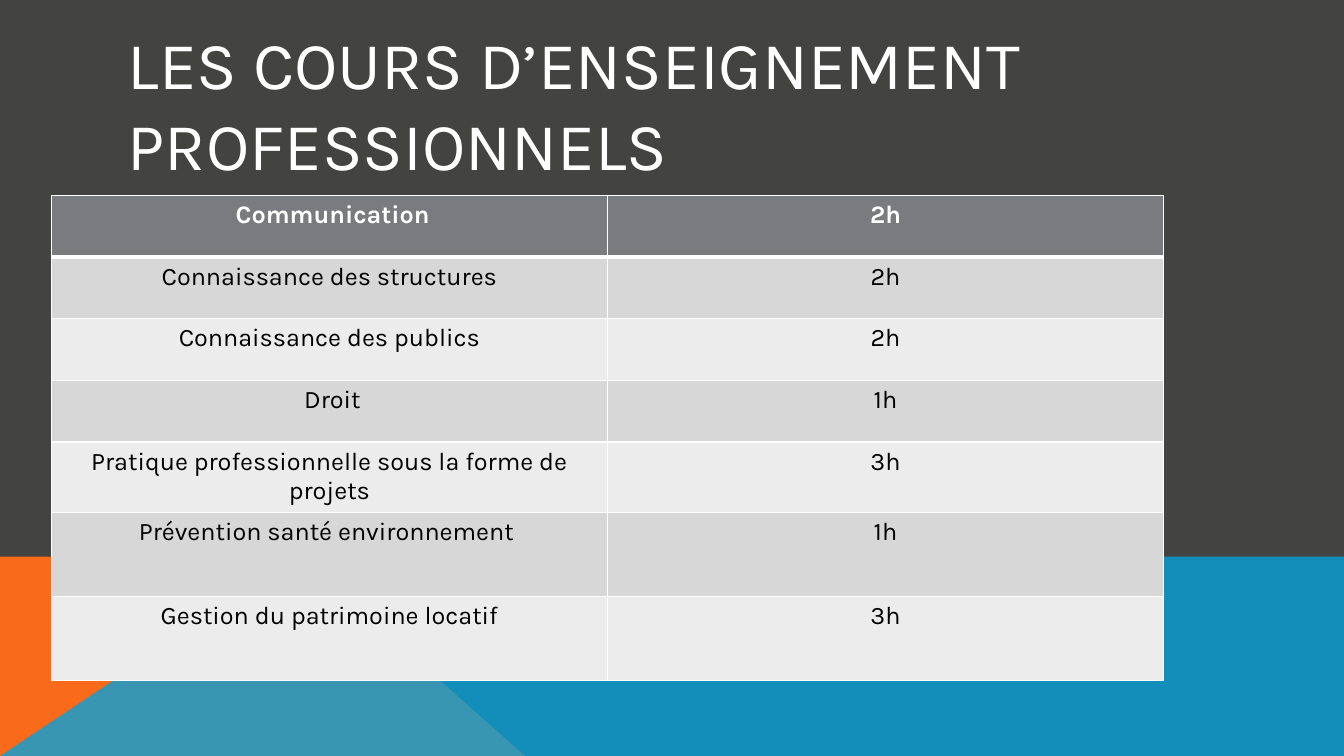
from lxml import etree
from pptx import Presentation
from pptx.dml.color import RGBColor
from pptx.enum.text import MSO_ANCHOR, PP_ALIGN
from pptx.oxml.ns import qn
from pptx.util import Pt

MIDDLE = MSO_ANCHOR.MIDDLE
CENTER = PP_ALIGN.CENTER
FONT = "Karla"
WHITE = RGBColor(0xFF, 0xFF, 0xFF)
BLACK = RGBColor(0x00, 0x00, 0x00)
BACKGROUND = RGBColor(0x43, 0x43, 0x42)
ORANGE = RGBColor(0xF9, 0x6A, 0x1B)
BLUE = RGBColor(0x08, 0xA1, 0xD9)
HEADER_GRAY = RGBColor(0x79, 0x7B, 0x7E)
DARK_BAND = RGBColor(0xD7, 0xD7, 0xD8)
LIGHT_BAND = RGBColor(0xEC, 0xEC, 0xEC)

WIDTH, HEIGHT = 960, 540
BAND_TOP = 397.5
COLUMN_WIDTH = 397.2
COURSES = [
    (" Communication", "2h", 44),
    ("Connaissance des structures", "2h", 44),
    ("Connaissance des publics", "2h", 44),
    (" Droit", "1h", 44),
    ("Pratique professionnelle sous la forme de projets", "3h", 44),
    ("Prévention santé environnement ", "1h", 60),
    ("Gestion du patrimoine locatif", "3h", 60),
]


def write_text(paragraph, text, **font_format):
    run = paragraph.add_run()
    run.text = text
    run.font.name = FONT
    run.font.color.rgb = font_format.pop("color")
    for name, value in font_format.items():
        setattr(run.font, name, value)


def add_cell_borders(cell, widths):
    """Draw white borders; widths maps a side tag to its width in points."""
    properties = cell._tc.get_or_add_tcPr()
    for position, (side, width) in enumerate(widths.items()):
        line = etree.Element(qn(f"a:{side}"), w=str(Pt(width)))
        fill = etree.SubElement(line, qn("a:solidFill"))
        etree.SubElement(fill, qn("a:srgbClr"), val=str(WHITE))
        properties.insert(position, line)


presentation = Presentation()
presentation.slide_width = Pt(WIDTH)
presentation.slide_height = Pt(HEIGHT)
slide = presentation.slides.add_slide(presentation.slide_layouts[6])
slide.background.fill.solid()
slide.background.fill.fore_color.rgb = BACKGROUND

# Bottom band: orange wedge under a translucent blue one
bands = [
    (ORANGE, 100, [(0, HEIGHT), (0, BAND_TOP), (214.5, BAND_TOP), (375, HEIGHT)]),
    (BLUE, 80, [(0, HEIGHT), (214, BAND_TOP), (WIDTH, BAND_TOP), (WIDTH, HEIGHT)]),
]
for color, opacity, corners in bands:
    points = [(Pt(x), Pt(y)) for x, y in corners]
    builder = slide.shapes.build_freeform(*points[0])
    builder.add_line_segments(points[1:], close=True)
    band = builder.convert_to_shape()
    band.shadow.inherit = False
    band.line.fill.background()
    band.fill.solid()
    band.fill.fore_color.rgb = color
    if opacity < 100:
        color_element = band._element.spPr.find(qn("a:solidFill"))[0]
        etree.SubElement(color_element, qn("a:alpha"), val=str(opacity * 1000))

# Title
title = slide.shapes.add_textbox(Pt(84.24), Pt(21.6), Pt(763.2), Pt(104.4))
title.text_frame.word_wrap = True
title.text_frame.vertical_anchor = MIDDLE
write_text(title.text_frame.paragraphs[0], "LES COURS D’ENSEIGNEMENT PROFESSIONNELS",
           size=Pt(48), color=WHITE)

# Course table
table = slide.shapes.add_table(
    len(COURSES), 2, Pt(36.72), Pt(139.68), Pt(2 * COLUMN_WIDTH),
    Pt(sum(height for *_, height in COURSES))).table
for column in table.columns:
    column.width = Pt(COLUMN_WIDTH)
for row_index, (course, hours, height) in enumerate(COURSES):
    is_header = row_index == 0
    table.rows[row_index].height = Pt(height)
    band_color = DARK_BAND if row_index % 2 else LIGHT_BAND
    for cell, text in zip(table.rows[row_index].cells, (course, hours)):
        cell.fill.solid()
        cell.fill.fore_color.rgb = HEADER_GRAY if is_header else band_color
        add_cell_borders(cell, {"lnL": 1, "lnR": 1,
                                "lnT": 3 if row_index == 1 else 1,
                                "lnB": 3 if is_header else 1})
        paragraph = cell.text_frame.paragraphs[0]
        paragraph.alignment = CENTER
        write_text(paragraph, text, size=Pt(18), bold=is_header,
                   color=WHITE if is_header else BLACK)

presentation.save("out.pptx")
